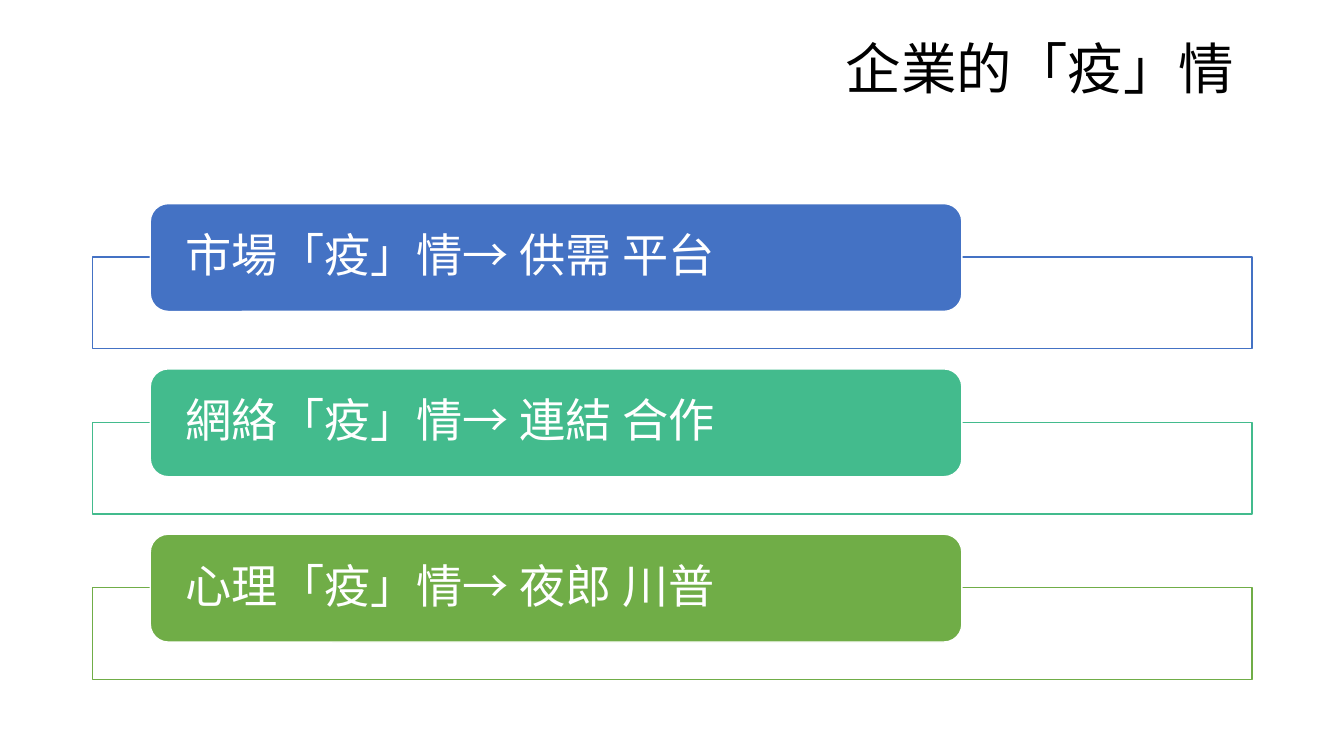
from dataclasses import dataclass

from lxml import etree
from pptx import Presentation
from pptx.dml.color import RGBColor
from pptx.enum.shapes import MSO_SHAPE
from pptx.enum.text import MSO_ANCHOR, MSO_AUTO_SIZE, PP_ALIGN
from pptx.oxml.ns import qn
from pptx.util import Emu, Pt

RECTANGLE = MSO_SHAPE.RECTANGLE
ROUNDED = MSO_SHAPE.ROUNDED_RECTANGLE
TOP, MIDDLE = MSO_ANCHOR.TOP, MSO_ANCHOR.MIDDLE
LEFT, RIGHT = PP_ALIGN.LEFT, PP_ALIGN.RIGHT
NO_AUTO_SIZE = MSO_AUTO_SIZE.NONE

EMU_PER_PX = 9144  # 100 px to the inch
TITLE_ONLY = 5


@dataclass(frozen=True)
class Theme:
    font: str = "Noto Sans CJK SC"
    title_size: float = 39.6
    label_size: float = 33
    line_width: float = 1
    line_spacing: float = 0.9
    ink: str = "000000"
    paper: str = "FFFFFF"
    blue: str = "4472C4"
    teal: str = "43BB8D"
    green: str = "70AD47"


THEME = Theme()

TITLE = "企業的「疫」情"
TOPICS = [
    ("市場「疫」情→ 供需 平台", THEME.blue),
    ("網絡「疫」情→ 連結 合作", THEME.teal),
    ("心理「疫」情→ 夜郎 川普", THEME.green),
]

# Layout in px
PAGE_WIDTH, PAGE_HEIGHT = 1333, 750
MARGIN, CONTENT_WIDTH = 92, 1150
TITLE_TOP, TITLE_HEIGHT = 40, 145
FIRST_LABEL_TOP, ROW_PITCH = 202, 164
LABEL_LEFT, LABEL_WIDTH, LABEL_HEIGHT = 149, 805, 107
FRAME_DROP, FRAME_HEIGHT = 53, 91


def px(length):
    return Emu(length * EMU_PER_PX)


def write_text(shape, text, size, color, align, anchor, insets):
    """Put one formatted line of text into a shape."""
    frame = shape.text_frame
    frame.text = text
    frame.word_wrap = True
    frame.auto_size = NO_AUTO_SIZE
    frame.vertical_anchor = anchor
    (frame.margin_left, frame.margin_top,
     frame.margin_right, frame.margin_bottom) = map(px, insets)
    para = frame.paragraphs[0]
    para.alignment = align
    para.line_spacing = THEME.line_spacing
    span = para.runs[0]
    span.font.size = Pt(size)
    span.font.name = THEME.font
    span.font.color.rgb = RGBColor.from_string(color)
    # East Asian glyphs take their own typeface entry
    east_asian = etree.SubElement(span.font._element, qn("a:ea"))
    east_asian.set("typeface", THEME.font)


def add_title(page):
    title = page.shapes.title
    title.left, title.top = px(MARGIN), px(TITLE_TOP)
    title.width, title.height = px(CONTENT_WIDTH), px(TITLE_HEIGHT)
    write_text(title, TITLE, THEME.title_size, THEME.ink, RIGHT, TOP,
               (10, 1, 18, 0))


def add_box(page, kind, left, top, width, height, fill, line):
    box = page.shapes.add_shape(kind, px(left), px(top), px(width), px(height))
    box.shadow.inherit = False
    box.fill.solid()
    box.fill.fore_color.rgb = RGBColor.from_string(fill)
    box.line.color.rgb = RGBColor.from_string(line)
    box.line.width = Pt(THEME.line_width)
    return box


def add_topic(page, top, text, color):
    """Add an outlined frame with a rounded label over its upper edge."""
    add_box(page, RECTANGLE, MARGIN, top + FRAME_DROP, CONTENT_WIDTH,
            FRAME_HEIGHT, THEME.paper, color)
    label = add_box(page, ROUNDED, LABEL_LEFT, top, LABEL_WIDTH,
                    LABEL_HEIGHT, color, THEME.paper)
    write_text(label, text, THEME.label_size, THEME.paper, LEFT, MIDDLE,
               (30, 0, 30, 0))


def main():
    deck = Presentation()
    deck.slide_width, deck.slide_height = px(PAGE_WIDTH), px(PAGE_HEIGHT)
    page = deck.slides.add_slide(deck.slide_layouts[TITLE_ONLY])
    add_title(page)
    for row, (text, color) in enumerate(TOPICS):
        add_topic(page, FIRST_LABEL_TOP + row * ROW_PITCH, text, color)
    deck.save("out.pptx")


if __name__ == "__main__":
    main()
